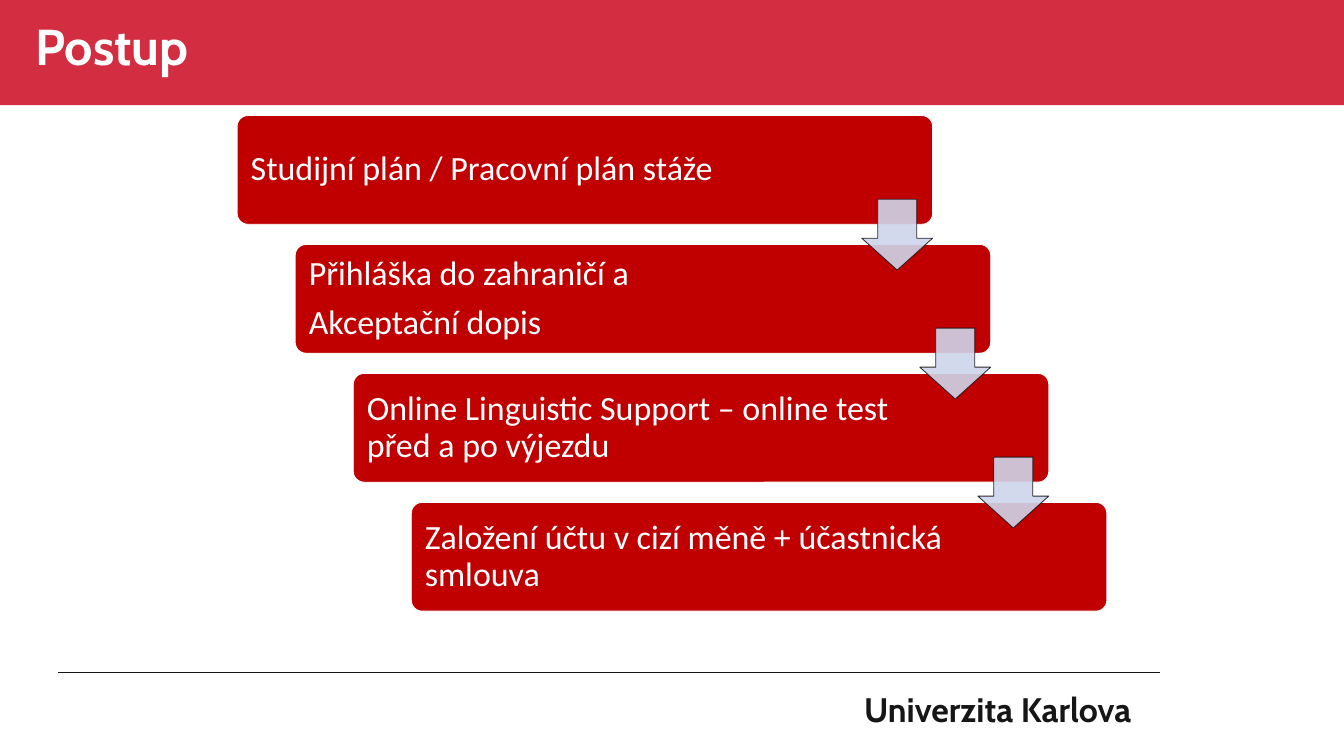
from dataclasses import dataclass

import pptx
import pptx.dml.color
import pptx.enum.shapes
import pptx.enum.text
import pptx.oxml
import pptx.oxml.ns
import pptx.util

SCALE = 9144  # EMU in one px, 100 px to the inch
WIDE, HIGH = 2199, 1237
INK, WHITE, BAND, RED, PALE = "171616", "FFFFFF", "D22D40", "C00000", "CFD5EA"
STEP_W, STEP_H, ARROW = 1138, 178, 116
LEFT, TOP, SHIFT, PITCH, DROP = 388, 189, 95, 211, 137
KIND = pptx.enum.shapes.MSO_SHAPE
ANCHOR = pptx.enum.text.MSO_ANCHOR
ALIGN = pptx.enum.text.PP_ALIGN


@dataclass
class Box:
    x: int
    y: int
    w: int
    h: int

    def emu(self) -> list[int]:
        return [px(n) for n in (self.x, self.y, self.w, self.h)]


@dataclass
class Step:
    box: Box
    lines: tuple[str, ...]


@dataclass
class Font:
    name: str
    size: float
    color: str
    bold: bool = False


def px(n: int) -> int:
    return pptx.util.Emu(n * SCALE)


def rgb(color: str):
    return pptx.dml.color.RGBColor.from_string(color)


def fade(shape, percent: int) -> None:
    """Make the fill and the line partly see-through."""
    props = shape.element.spPr
    for color in props.iter(pptx.oxml.ns.qn("a:srgbClr")):
        alpha = pptx.oxml.parse_xml(f'<a:alpha {pptx.oxml.ns.nsdecls("a")}/>')
        alpha.set("val", str(percent * 1000))
        color.append(alpha)


def write(frame, lines: tuple[str, ...], font: Font, gap: float = 0,
          lead: float = 1.0) -> None:
    frame.word_wrap = True
    for i, line in enumerate(lines):
        para = frame.add_paragraph() if i else frame.paragraphs[0]
        para.alignment = ALIGN.LEFT
        para.line_spacing = lead
        para.space_before = pptx.util.Pt(0)
        para.space_after = pptx.util.Pt(gap)
        run = para.add_run()
        run.text = line
        run.font.name = font.name
        run.font.size = pptx.util.Pt(font.size)
        run.font.bold = font.bold
        run.font.color.rgb = rgb(font.color)


def inset(frame, left: int, top: int, right: int, bottom: int) -> None:
    frame.margin_left, frame.margin_top = px(left), px(top)
    frame.margin_right, frame.margin_bottom = px(right), px(bottom)


def draw(slide, kind, box: Box, fill: str, edge: str = "",
         adjust: tuple[float, ...] = ()):
    shape = slide.shapes.add_shape(kind, *box.emu())
    shape.shadow.inherit = False
    shape.fill.solid()
    shape.fill.fore_color.rgb = rgb(fill)
    if edge:
        shape.line.color.rgb = rgb(edge)
        shape.line.width = pptx.util.Pt(1)
    else:
        shape.line.fill.background()
    for i, value in enumerate(adjust):
        shape.adjustments[i] = value
    return shape


def head(slide) -> None:
    draw(slide, KIND.RECTANGLE, Box(0, 0, WIDE, 172), BAND)
    title = slide.shapes.title
    title.left, title.top, title.width, title.height = Box(48, 31, 1422, 118).emu()
    frame = title.text_frame
    frame.auto_size = pptx.enum.text.MSO_AUTO_SIZE.NONE
    frame.vertical_anchor = ANCHOR.TOP
    inset(frame, 10, 5, 10, 5)
    write(frame, ("Postup",), Font("Cabin", 59.4, WHITE, True), lead=0.9)
    slide.shapes.element.append(title.element)  # in front of the band


def foot(slide) -> None:
    rule = slide.shapes.add_connector(
        pptx.enum.shapes.MSO_CONNECTOR.STRAIGHT,
        px(95), px(1100), px(1898), px(1100))
    rule.line.color.rgb = rgb(INK)
    rule.line.width = pptx.util.Pt(0.5)
    rule.element.spPr.append(pptx.oxml.parse_xml(
        f'<a:effectLst {pptx.oxml.ns.nsdecls("a")}/>'))
    frame = slide.shapes.add_textbox(*Box(1414, 1126, 510, 90).emu()).text_frame
    inset(frame, 0, 0, 0, 0)
    write(frame, ("Univerzita Karlova",), Font("Cabin", 40, INK, True))


def stairs(slide, steps: list[Step]) -> None:
    for step in steps:
        shape = draw(slide, KIND.ROUNDED_RECTANGLE, step.box, RED, WHITE, (0.1,))
        frame = shape.text_frame
        frame.vertical_anchor = ANCHOR.MIDDLE
        inset(frame, 17, 17, 228, 17)  # the right side is kept for the arrow
        write(frame, step.lines, Font("Calibri", 40, WHITE), gap=14, lead=0.9)
    for step in steps[:-1]:
        box = Box(step.box.x + STEP_W - ARROW, step.box.y + DROP, ARROW, ARROW)
        fade(draw(slide, KIND.DOWN_ARROW, box, PALE, INK, (0.55, 0.45)), 90)


def main() -> None:
    deck = pptx.Presentation()
    deck.slide_width, deck.slide_height = px(WIDE), px(HIGH)
    slide = deck.slides.add_slide(deck.slide_layouts.get_by_name("Title Only"))
    texts = [
        ("Studijní plán / Pracovní plán stáže",),
        ("Přihláška do zahraničí a", "Akceptační dopis"),
        ("Online Linguistic Support – online test před a po výjezdu",),
        ("Založení účtu v cizí měně + účastnická smlouva",),
    ]
    steps = [
        Step(Box(LEFT + i * SHIFT, TOP + i * PITCH, STEP_W, STEP_H), lines)
        for i, lines in enumerate(texts)
    ]
    head(slide)
    foot(slide)
    stairs(slide, steps)
    deck.save("out.pptx")


if __name__ == "__main__":
    main()
